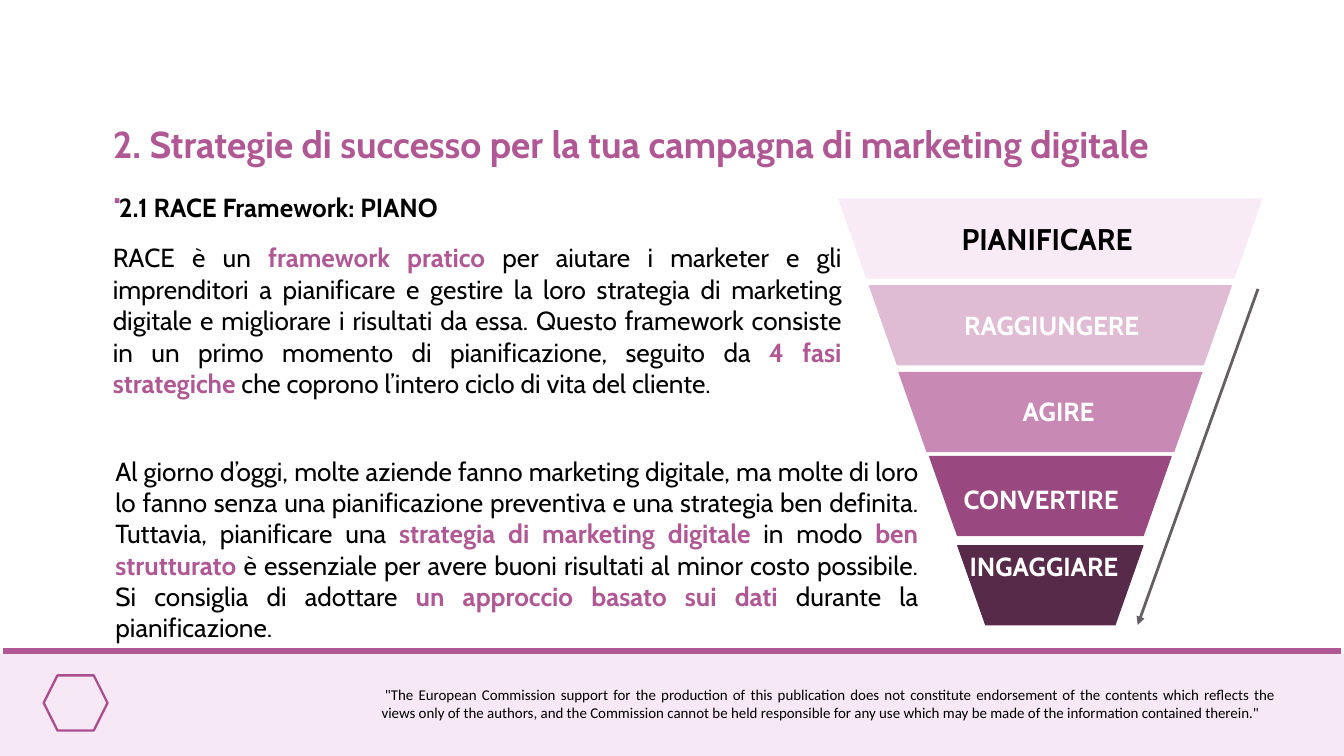
from lxml import etree
from pptx import Presentation
from pptx.dml.color import RGBColor
from pptx.enum.shapes import MSO_CONNECTOR, MSO_SHAPE
from pptx.enum.text import MSO_AUTO_SIZE, PP_ALIGN
from pptx.oxml.ns import qn
from pptx.util import Inches, Pt

RECTANGLE, TRAPEZOID, HEXAGON = MSO_SHAPE.RECTANGLE, MSO_SHAPE.TRAPEZOID, MSO_SHAPE.HEXAGON
STRAIGHT = MSO_CONNECTOR.STRAIGHT
FIT = MSO_AUTO_SIZE.SHAPE_TO_FIT_TEXT
LEFT, JUSTIFY = PP_ALIGN.LEFT, PP_ALIGN.JUSTIFY

BLACK = RGBColor(0x00, 0x00, 0x00)
WHITE = RGBColor(0xFF, 0xFF, 0xFF)
ACCENT = RGBColor(0xB0, 0x58, 0x94)
ICON = RGBColor(0xAB, 0x4E, 0x8E)
FOOTER = RGBColor(0xF6, 0xE9, 0xF5)
ARROW = RGBColor(0x64, 0x5F, 0x63)

WIDTH, HEIGHT = 20, 11.25
MARGIN = 1.58
FOOTER_TOP = 9.72
FUNNEL_CENTER = 15.63
STAGE_HEIGHT = 1.18

TITLE = ["2. Strategie di successo per la tua campagna di marketing digitale", "."]
SUBTITLE = "2.1 RACE Framework: PIANO"
INTRO = [
    ("RACE è un ", False),
    ("framework pratico ", True),
    ("per aiutare i marketer e gli imprenditori a pianificare e gestire la loro strategia "
     "di marketing digitale e migliorare i risultati da essa. Questo framework consiste in "
     "un primo momento di pianificazione, seguito da ", False),
    ("4 fasi strategiche ", True),
    ("che coprono l’intero ciclo di vita del cliente.", False),
]
ADVICE = [
    ("Al giorno d’oggi, molte aziende fanno marketing digitale, ma molte di loro lo fanno "
     "senza una pianificazione preventiva e una strategia ben definita. Tuttavia, "
     "pianificare una ", False),
    ("strategia di marketing digitale ", True),
    ("in modo ", False),
    ("ben strutturato ", True),
    ("è essenziale per avere buoni risultati al minor costo possibile. Si consiglia di "
     "adottare ", False),
    ("un approccio basato sui dati ", True),
    ("durante la pianificazione.", False),
]
DISCLAIMER = (
    '"The European Commission support for the production of this publication does not '
    "constitute endorsement of the contents which reflects the views only of the authors, "
    "and the Commission cannot be held responsible for any use which may be made of the "
    'information contained therein."'
)
# label, fill, top, width, label left, label top, label width, size, label colour
STAGES = [
    ("PIANIFICARE", RGBColor(0xF8, 0xEB, 0xF6), 2.96, 6.3, 14.21, 3.23, 3.15, 32, BLACK),
    ("RAGGIUNGERE", RGBColor(0xDF, 0xBB, 0xD4), 4.25, 5.39, 14.25, 4.55, 3.15, 28, WHITE),
    ("AGIRE", RGBColor(0xC8, 0x8A, 0xB5), 5.54, 4.51, 15.12, 5.84, 2.11, 28, WHITE),
    ("CONVERTIRE", RGBColor(0x99, 0x49, 0x80), 6.79, 3.6, 14.24, 7.15, 3.12, 28, WHITE),
    ("INGAGGIARE", RGBColor(0x58, 0x2A, 0x4A), 8.12, 2.76, 14.33, 8.14, 3.26, 28, WHITE),
]


def add_shape(s, kind, x, y, w, h, fill=None, line=None, weight=1):
    sp = s.shapes.add_shape(kind, Inches(x), Inches(y), Inches(w), Inches(h))
    sp.shadow.inherit = False
    if fill is None:
        sp.fill.background()
    else:
        sp.fill.solid()
        sp.fill.fore_color.rgb = fill
    if line is None:
        sp.line.fill.background()
    else:
        sp.line.color.rgb = line
        sp.line.width = Pt(weight)
    return sp


def add_line(s, x1, y1, x2, y2, color, weight):
    line = s.shapes.add_connector(STRAIGHT, Inches(x1), Inches(y1), Inches(x2), Inches(y2))
    line.line.color.rgb = color
    line.line.width = Pt(weight)
    etree.SubElement(line._element.spPr, qn("a:effectLst"))
    return line


def add_text(s, box, paragraphs, size, color=BLACK, bold=False, align=LEFT, font="Cabin"):
    tf = s.shapes.add_textbox(*map(Inches, box)).text_frame
    tf.word_wrap = True
    tf.auto_size = FIT
    for i, runs in enumerate(paragraphs):
        p = tf.add_paragraph() if i else tf.paragraphs[0]
        p.alignment = align
        for text, strong in runs:
            r = p.add_run()
            r.text = text
            r.font.name = font
            r.font.size = Pt(size)
            r.font.bold = bold or strong
            r.font.color.rgb = ACCENT if strong else color
    return tf


def add_footer(s):
    add_shape(s, RECTANGLE, 0, FOOTER_TOP, WIDTH, HEIGHT - FOOTER_TOP, FOOTER)
    add_line(s, 0.05, 9.69, WIDTH - 0.05, 9.69, ACCENT, 6.75)
    add_shape(s, HEXAGON, 0.65, 10.05, 0.95, 0.82, line=ICON, weight=2.5)
    tf = add_text(s, (5.58, 10.15, 13.5, 0.64), [[(DISCLAIMER, False)]], 16,
                  align=JUSTIFY, font="Calibri")
    tf.paragraphs[0]._p.get_or_add_pPr().set("indent", str(Inches(0.05)))


def add_funnel(s):
    for _, fill, top, width, *_ in STAGES:
        sp = add_shape(s, TRAPEZOID, FUNNEL_CENTER - width / 2, top, width, STAGE_HEIGHT,
                       fill, fill)
        sp.adjustments[0] = 0.353
        sp.rotation = 180
    for label, _, _, _, x, y, w, size, color in STAGES:
        add_text(s, (x, y, w, 0.6), [[(label, False)]], size, color, bold=True)
    arrow = add_line(s, 18.72, 4.3, 16.93, 9.3, ARROW, 3)
    etree.SubElement(arrow.line._get_or_add_ln(), qn("a:tailEnd"), type="triangle")


def main():
    prs = Presentation()
    prs.slide_width, prs.slide_height = Inches(WIDTH), Inches(HEIGHT)
    s = prs.slides.add_slide(prs.slide_layouts[6])
    add_footer(s)
    add_text(s, (MARGIN, 1.76, 17.13, 1.45), [[(text, True)] for text in TITLE], 40)
    add_text(s, (1.67, 2.8, 10.98, 0.57), [[(SUBTITLE, False)]], 28, bold=True)
    add_text(s, (1.62, 6.72, 12.14, 3.57), [ADVICE], 28, align=JUSTIFY)
    add_text(s, (MARGIN, 3.55, 11.04, 3.4), [INTRO], 28, align=JUSTIFY)
    add_funnel(s)
    prs.save("out.pptx")


if __name__ == "__main__":
    main()
